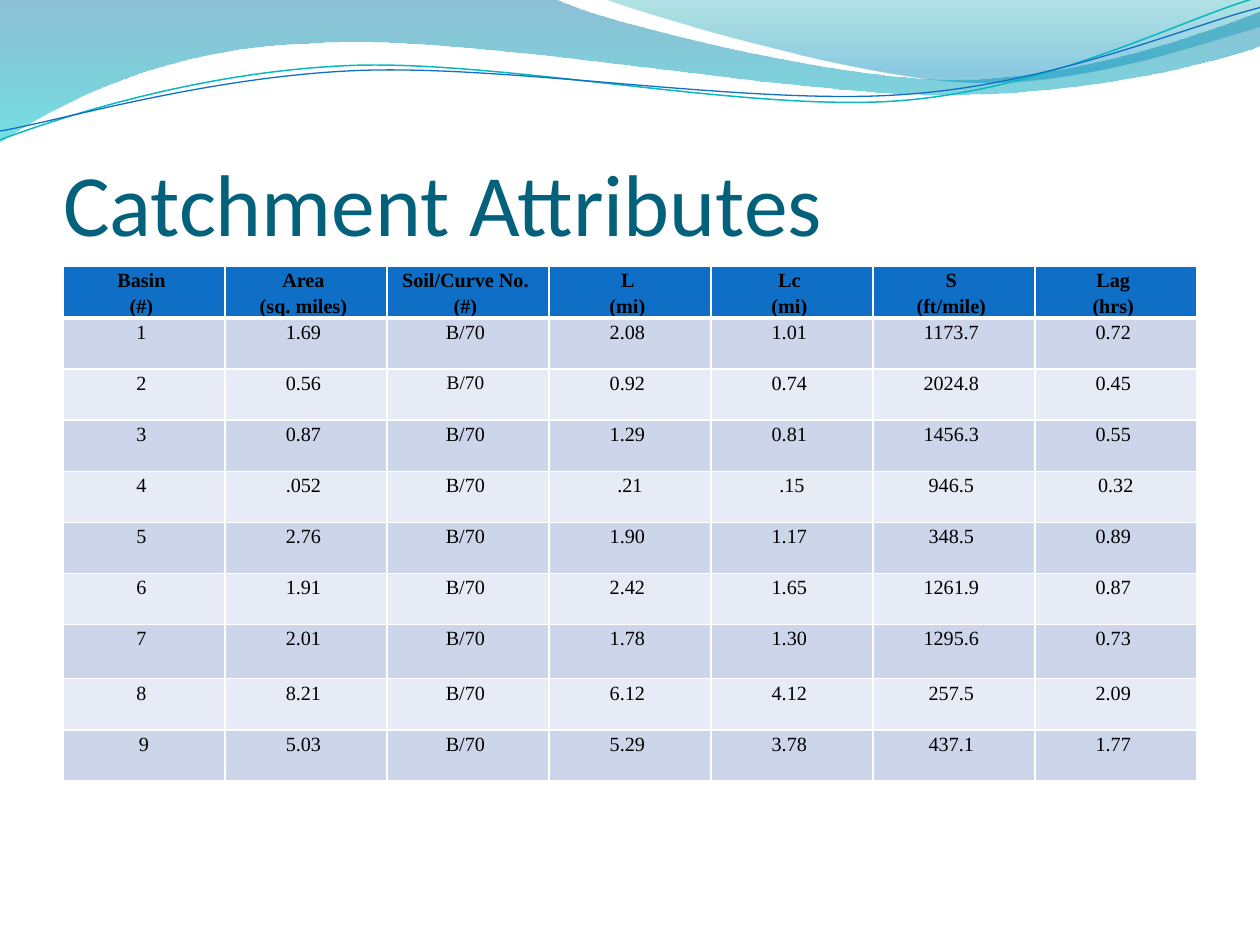
from dataclasses import dataclass
from math import cos, radians, sin

from lxml.etree import SubElement
from pptx import Presentation
from pptx.dml.color import RGBColor
from pptx.enum.text import MSO_ANCHOR, MSO_AUTO_SIZE, PP_ALIGN
from pptx.oxml.ns import qn
from pptx.util import Cm, Pt


@dataclass(frozen=True)
class Theme:
    title: str = "04617B"
    head: str = "0F6FC6"
    bands: tuple = ("CCD5EA", "E7EBF5")
    ink: str = "000000"
    rule: str = "FFFFFF"
    title_font: str = "Calibri"
    cell_font: str = "Times New Roman"
    title_size: float = 50
    cell_size: float = 11.5
    small_size: float = 11


THEME = Theme()
TITLE = "Catchment Attributes"

# Waves: start point, then 2-number line steps and 6-number curve steps,
# on a grid ten units wide
FILLS = [
    # gradient stops: position, colour, opacity in percent
    ([(0, "0074A1", 45), (100, "00C6CF", 55)],
     [(0, 0), (4.4, -0.01), (4.76, 0.17, 6.64, 0.63, 7.58, 0.63),
      (8.53, 0.63, 9.58, 0.26, 10, 0.09), (10.01, 0.36),
      (9.83, 0.44, 8.7, 0.76, 7.46, 0.75), (6.22, 0.75, 3.82, 0.28, 2.57, 0.34),
      (1.29, 0.36, 0.46, 0.83, -0.01, 1.13)]),
    ([(0, "00A1A9", 30), (80, "008BBF", 45)],
     [(4.79, -0.01), (5.09, 0.11, 6.82, 0.62, 7.69, 0.65),
      (8.56, 0.69, 9.61, 0.32, 10, 0.21), (10, 0)]),
]
LINES = [
    ("0AB8BF", 0.85,
     [(0, 1.11), (0.48, 0.93, 1.58, 0.57, 2.77, 0.52),
      (3.95, 0.47, 5.93, 0.89, 7.13, 0.8), (8.33, 0.71, 9.38, 0.15, 9.98, -0.02)]),
    ("0F6FC6", 0.75,
     [(0, 1.04), (0.47, 0.96, 1.64, 0.61, 2.83, 0.56),
      (4.03, 0.51, 5.97, 0.84, 7.17, 0.75), (8.36, 0.67, 9.41, 0.21, 10, 0.06)]),
]
TILT = -2.7  # degrees the thin lines are turned
PIVOT = (4.99, 0.58)

HEADS = [("Basin", "(#)"), ("Area", "(sq. miles)"), ("Soil/Curve No.", "(#)"),
         ("L", "(mi)"), ("Lc", "(mi)"), ("S", "(ft/mile)"), ("Lag", "(hrs)")]
ROWS = [
    ("1", "1.69", "B/70", "2.08", "1.01", "1173.7", "0.72"),
    ("2", "0.56", "B/70", "0.92", "0.74", "2024.8", "0.45"),
    ("3", "0.87", "B/70", "1.29", "0.81", "1456.3", "0.55"),
    ("4", ".052", "B/70", ".21", ".15", "946.5", "0.32"),
    ("5", "2.76", "B/70", "1.90", "1.17", "348.5", "0.89"),
    ("6", "1.91", "B/70", "2.42", "1.65", "1261.9", "0.87"),
    ("7", "2.01", "B/70", "1.78", "1.30", "1295.6", "0.73"),
    ("8", "8.21", "B/70", "6.12", "4.12", "257.5", "2.09"),
    ("9", "5.03", "B/70", "5.29", "3.78", "437.1", "1.77"),
]
TIGHT = {".21", ".15", "0.32", "9"}  # values without a trailing space
SMALL = (2, 2)  # the one cell in smaller type
TALL = 7  # the one taller row


def rgb(code):
    return RGBColor.from_string(code)


def turn(point, angle):
    """Turn a point about the pivot, clockwise on the slide."""
    dx, dy = point[0] - PIVOT[0], point[1] - PIVOT[1]
    c, s = cos(radians(angle)), sin(radians(angle))
    return PIVOT[0] + dx * c - dy * s, PIVOT[1] + dx * s + dy * c


def bend(wave, steps):
    """Join each three line steps of a curve into one Bezier step."""
    nodes = list(wave._element.iter(qn("a:lnTo")))
    for step in steps[1:]:
        size = len(step) // 2
        group, nodes = nodes[:size], nodes[size:]
        if size == 3:
            curve = group[0].makeelement(qn("a:cubicBezTo"))
            group[0].addprevious(curve)
            for node in group:
                curve.append(node[0])
                node.getparent().remove(node)


def draw_wave(shapes, box, steps, close, angle=0):
    left, top, width = box[:3]
    unit = width / 10
    pairs = [step[i:i + 2] for step in steps for i in range(0, len(step), 2)]
    points = [(left + x * unit, top + y * unit)
              for x, y in (turn(pair, -angle) for pair in pairs)]
    pen = shapes.build_freeform(*points[0], scale=1.0)
    pen.add_line_segments(points[1:], close=close)
    wave = pen.convert_to_shape()
    wave.rotation = angle
    wave.shadow.inherit = False
    bend(wave, steps)
    return wave


def add_waves(slide, box):
    # Filled bands
    for stops, steps in FILLS:
        wave = draw_wave(slide.shapes, box, steps, True)
        wave.line.fill.background()
        wave.fill.gradient()
        wave.fill.gradient_angle = 270
        nodes = wave._element.spPr.iter(qn("a:gs"))
        for stop, node, (place, code, alpha) in zip(wave.fill.gradient_stops, nodes, stops):
            stop.color.rgb = rgb(code)
            stop.position = place / 100
            SubElement(node[0], qn("a:alpha"), val=str(alpha * 1000))
    # Thin lines
    group = slide.shapes.add_group_shape()
    for code, width, steps in LINES:
        wave = draw_wave(group.shapes, box, steps, False, TILT)
        wave.fill.background()
        wave.line.color.rgb = rgb(code)
        wave.line.width = Pt(width)


def set_font(para, name, size, code, bold=False):
    font = para.font
    font.name, font.size, font.bold = name, Pt(size), bold
    font.color.rgb = rgb(code)


def add_title(slide, box):
    title = slide.shapes.title
    title.left, title.top, title.width, title.height = box
    frame = title.text_frame
    frame.text = TITLE
    frame.auto_size = MSO_AUTO_SIZE.NONE
    frame.vertical_anchor = MSO_ANCHOR.BOTTOM
    frame.margin_left = frame.margin_right = frame.margin_bottom = 0
    frame.margin_top = Cm(0.13)
    para = frame.paragraphs[0]
    para.alignment = PP_ALIGN.LEFT
    set_font(para, THEME.title_font, THEME.title_size, THEME.title)
    slide.shapes._spTree.append(title._element)  # in front of the waves


def add_rules(cell):
    props = cell._tc.get_or_add_tcPr()
    for side, width in (("L", 1), ("R", 1), ("T", 1), ("B", 3)):
        line = SubElement(props, qn(f"a:ln{side}"), w=str(Pt(width)))
        fill = SubElement(line, qn("a:solidFill"))
        SubElement(fill, qn("a:srgbClr"), val=THEME.rule)


def fill_cell(cell, row, col, lines):
    head = row == 0
    if head:
        add_rules(cell)
    cell.fill.solid()
    cell.fill.fore_color.rgb = rgb(THEME.head if head else THEME.bands[(row - 1) % 2])
    cell.margin_left = cell.margin_right = Cm(0.18)
    cell.margin_top = cell.margin_bottom = 0
    cell.text = "\n".join(s if s in TIGHT else s + " " for s in lines)
    size = THEME.small_size if (row, col) == SMALL else THEME.cell_size
    for para in cell.text_frame.paragraphs:
        para.alignment = PP_ALIGN.CENTER
        para.line_spacing = 1.15
        set_font(para, THEME.cell_font, size, THEME.ink, head)


def add_grid(slide, box):
    data = [HEADS] + [[(value,) for value in row] for row in ROWS]
    table = slide.shapes.add_table(len(data), len(HEADS), *box).table
    for col in table.columns:
        col.width = box[2] // len(HEADS)
    for r, values in enumerate(data):
        table.rows[r].height = Cm(1.09 if r == TALL else 1.03)
        for c, lines in enumerate(values):
            fill_cell(table.cell(r, c), r, c, lines)


def main():
    deck = Presentation()
    deck.slide_width, deck.slide_height = Cm(25.4), Cm(19.05)
    slide = deck.slides.add_slide(deck.slide_layouts[5])
    add_waves(slide, (0, 0, deck.slide_width, Cm(2.87)))
    add_title(slide, (Cm(1.27), Cm(1.95), Cm(22.86), Cm(3.17)))
    add_grid(slide, (Cm(1.27), Cm(5.37), Cm(22.86), Cm(10.49)))
    deck.save("out.pptx")


if __name__ == "__main__":
    main()
